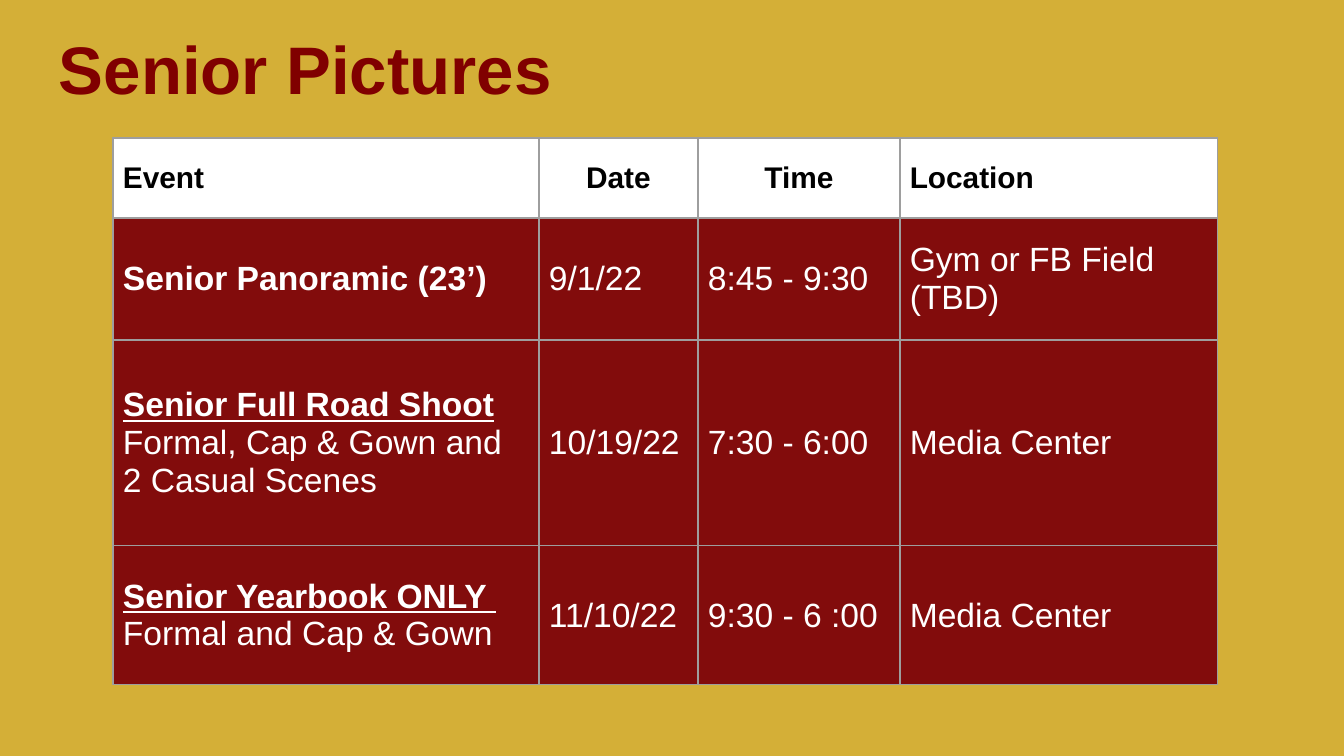
import pptx
import pptx.dml.color
import pptx.enum.text
import pptx.oxml
import pptx.oxml.ns
import pptx.util
from dataclasses import dataclass

ANCHOR = pptx.enum.text.MSO_ANCHOR
ALIGN = pptx.enum.text.PP_ALIGN
SCALE = 914400 / 134.4  # EMU in one px


@dataclass(frozen=True)
class Theme:
    font: str = "Arial"
    gold: str = "D4AF37"
    title: str = "800000"
    maroon: str = "820C0C"
    white: str = "FFFFFF"
    black: str = "000000"
    rule: str = "9E9E9E"
    big: int = 36
    head: int = 16
    body: int = 18


def px(n):
    return pptx.util.Emu(round(n * SCALE))


def rgb(code):
    return pptx.dml.color.RGBColor.from_string(code)


class Deck:
    def __init__(self, theme, wide, high):
        self.theme = theme
        self.prs = pptx.Presentation()
        self.prs.slide_width = px(wide)
        self.prs.slide_height = px(high)
        self.slide = self.prs.slides.add_slide(self.prs.slide_layouts[6])
        self.paint(self.slide.background.fill, theme.gold)

    def paint(self, fill, color):
        fill.solid()
        fill.fore_color.rgb = rgb(color)

    def style(self, para, size, color, bold=False, under=False):
        font = para.font
        font.name = self.theme.font
        font.size = pptx.util.Pt(size)
        font.color.rgb = rgb(color)
        font.bold = bold
        font.underline = under

    def title(self, text, x, y, w, h):
        box = self.slide.shapes.add_textbox(px(x), px(y), px(w), px(h))
        frame = box.text_frame
        frame.word_wrap = True
        frame.vertical_anchor = ANCHOR.MIDDLE
        frame.margin_left = frame.margin_right = px(13)
        frame.margin_top = frame.margin_bottom = px(13)
        frame.text = text
        self.style(frame.paragraphs[0], self.theme.big, self.theme.title, True)

    def edge(self, cell):
        """Draw all four borders of a cell, ahead of its fill."""
        props = cell._tc.get_or_add_tcPr()
        for spot, side in enumerate(("lnL", "lnR", "lnT", "lnB")):
            line = pptx.oxml.parse_xml(
                f'<a:{side} {pptx.oxml.ns.nsdecls("a")} w="9525"><a:solidFill>'
                f'<a:srgbClr val="{self.theme.rule}"/></a:solidFill></a:{side}>')
            props.insert(spot, line)

    def cell(self, cell, text, head, first, center):
        theme = self.theme
        cell.text = text
        cell.vertical_anchor = ANCHOR.MIDDLE
        cell.margin_left = cell.margin_right = px(10)
        cell.margin_top = cell.margin_bottom = 0
        size, color, fill = (
            (theme.head, theme.black, theme.white) if head
            else (theme.body, theme.white, theme.maroon))
        paras = cell.text_frame.paragraphs
        for i, para in enumerate(paras):
            lead = first and i == 0
            self.style(para, size, color, head or lead, lead and len(paras) > 1)
            para.alignment = ALIGN.CENTER if center else ALIGN.LEFT
        self.paint(cell.fill, fill)
        self.edge(cell)

    def table(self, data, x, y, cols, rows):
        grid = self.slide.shapes.add_table(
            len(rows), len(cols), px(x), px(y), px(sum(cols)), px(sum(rows))).table
        grid.first_row = grid.horz_banding = False
        for col, w in zip(grid.columns, cols):
            col.width = px(w)
        for row, h in zip(grid.rows, rows):
            row.height = px(h)
        for r, line in enumerate(data):
            for c, text in enumerate(line):
                self.cell(grid.cell(r, c), text, r == 0, c == 0,
                          r == 0 and c in (1, 2))

    def save(self):
        self.prs.save("out.pptx")


EVENTS = [
    ("Event", "Date", "Time", "Location"),
    ("Senior Panoramic (23’) ", "9/1/22", "8:45 - 9:30", "Gym or FB Field (TBD)"),
    ("Senior Full Road Shoot\nFormal, Cap & Gown and \n2 Casual Scenes",
     "10/19/22", "7:30 - 6:00", "Media Center"),
    ("Senior Yearbook ONLY \nFormal and Cap & Gown",
     "11/10/22", "9:30 - 6 :00", "Media Center"),
]


def main():
    deck = Deck(Theme(), 1344, 756)
    deck.title("Senior Pictures", 46, 6, 1252, 124)
    deck.table(EVENTS, 113, 138, (426, 159, 202, 318), (80, 122, 206, 139))
    deck.save()


if __name__ == "__main__":
    main()
